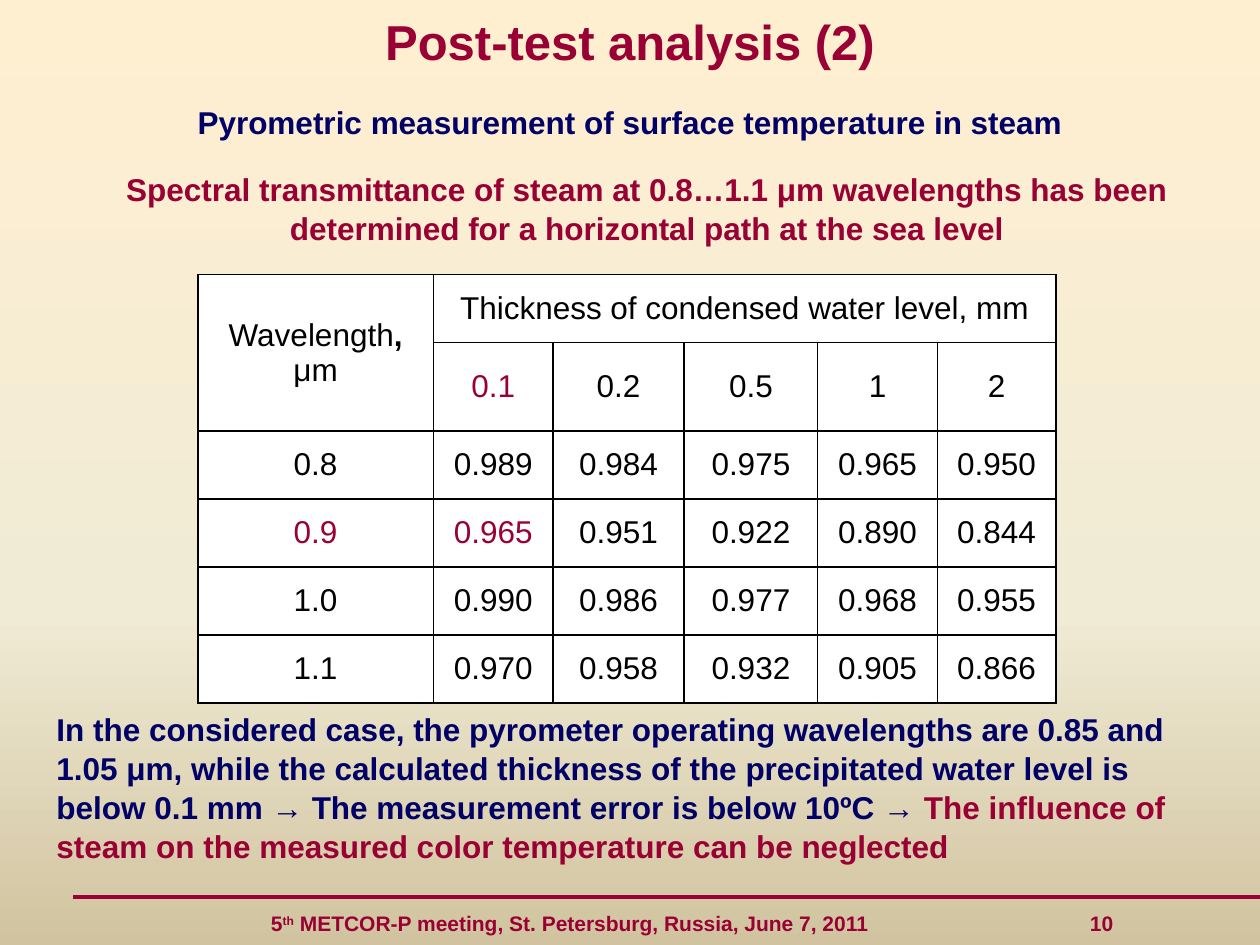
import dataclasses
import typing

import lxml.etree
import pptx
import pptx.dml.color
import pptx.enum.shapes
import pptx.enum.text
import pptx.oxml.ns
import pptx.util

Inches = pptx.util.Inches
Align = pptx.enum.text.PP_ALIGN
Anchor = pptx.enum.text.MSO_ANCHOR
qualified = pptx.oxml.ns.qn


@dataclasses.dataclass(frozen=True)
class Theme:
    font: str = "Arial"
    crimson: str = "990033"
    navy: str = "000066"
    black: str = "000000"
    white: str = "FFFFFF"
    background: tuple = ((0, "FFEFD1"), (65, "F0EBD5"), (100, "D1C39F"))
    title_size: int = 28
    body_size: int = 18
    footer_size: int = 12


THEME = Theme()


class Span(typing.NamedTuple):
    text: str
    color: str | None = None
    bold: bool | None = None
    baseline: int | None = None


@dataclasses.dataclass(frozen=True)
class TextBlock:
    left: float
    top: float
    width: float
    height: float
    spans: tuple[Span, ...]
    color: str
    size: int = THEME.body_size
    align: Align = Align.CENTER
    anchor: Anchor = Anchor.MIDDLE
    line_spacing: float = 1.0
    inset: float = 0.1


BLOCKS = (
    TextBlock(0, 0, 10, 0.65, (Span("Post-test analysis (2)"),), THEME.crimson, THEME.title_size),
    TextBlock(0, 0.67, 10, 0.6,
              (Span("Pyrometric measurement of surface temperature in steam"),), THEME.navy),
    TextBlock(0.62, 1.3, 9.03, 0.7,
              (Span("Spectral transmittance of steam at 0.8…1.1 μm wavelengths has been "
                    "determined for a horizontal path at the sea level"),),
              THEME.crimson, line_spacing=1.04),
    TextBlock(0.35, 5.57, 9.43, 1.49,
              (Span("In the considered case, the pyrometer operating wavelengths are 0.85 and "
                    "1.05 μm, while the calculated thickness of the precipitated water level is "
                    "below 0.1 mm → The measurement error is below 10ºС → "),
               Span("The influence of steam on the measured color temperature can be neglected",
                    THEME.crimson)),
              THEME.navy, align=Align.LEFT, anchor=Anchor.TOP, line_spacing=1.04),
)

FOOTER = TextBlock(2, 7.08, 7.18, 0.5,
                   (Span("5"), Span("th", baseline=30),
                    Span(" METCOR-P meeting, St. Petersburg, Russia, June 7, 2011\t10")),
                   THEME.crimson, THEME.footer_size, Align.LEFT, inset=0.15)
PAGE_NUMBER_TAB = 6.5

COLUMN_WIDTHS = (1.87, 0.95, 1.04, 1.06, 0.95, 0.94)
ROW_HEIGHT = 0.54
THICKNESSES = ("0.1", "0.2", "0.5", "1", "2")
TRANSMITTANCE = {
    "0.8": ("0.989", "0.984", "0.975", "0.965", "0.950"),
    "0.9": ("0.965", "0.951", "0.922", "0.890", "0.844"),
    "1.0": ("0.990", "0.986", "0.977", "0.968", "0.955"),
    "1.1": ("0.970", "0.958", "0.932", "0.905", "0.866"),
}
HIGHLIGHTED_CELLS = {(1, 1), (3, 0), (3, 1)}


def rgb(color: str) -> pptx.dml.color.RGBColor:
    return pptx.dml.color.RGBColor.from_string(color)


def add_child(parent, tag: str, **attributes: str):
    child = lxml.etree.SubElement(parent, qualified(tag))
    for name, value in attributes.items():
        child.set(name, value)
    return child


def paint_background(page) -> None:
    fill = page.background.fill
    fill.gradient()
    fill.gradient_angle = 270
    stops = next(page.element.iter(qualified("a:gsLst")))
    for stop in list(stops):
        stops.remove(stop)
    for percent, color in THEME.background:
        stop = add_child(stops, "a:gs", pos=str(percent * 1000))
        add_child(stop, "a:srgbClr", val=color)


def write_paragraph(para, spans: typing.Iterable[Span], color: str, size: int,
                    align: Align, bold: bool) -> None:
    para.alignment = align
    para.font.name = THEME.font
    para.font.size = pptx.util.Pt(size)
    para.font.bold = bold
    para.font.color.rgb = rgb(color)
    for span in spans:
        run = para.add_run()
        run.text = span.text
        if span.color:
            run.font.color.rgb = rgb(span.color)
        if span.bold is not None:
            run.font.bold = span.bold
        if span.baseline:
            run.font._element.set("baseline", str(span.baseline * 1000))


def add_text(page, block: TextBlock):
    box = page.shapes.add_textbox(Inches(block.left), Inches(block.top),
                                  Inches(block.width), Inches(block.height))
    frame = box.text_frame
    frame.word_wrap = True
    frame.vertical_anchor = block.anchor
    frame.margin_left = Inches(block.inset)
    para = frame.paragraphs[0]
    para.line_spacing = block.line_spacing
    write_paragraph(para, block.spans, block.color, block.size, block.align, True)
    return para


def add_footer(page) -> None:
    rule = page.shapes.add_connector(pptx.enum.shapes.MSO_CONNECTOR.STRAIGHT,
                                     Inches(0.58), Inches(7.12), Inches(10), Inches(7.12))
    rule.line.color.rgb = rgb(THEME.crimson)
    rule.line.width = pptx.util.Pt(2.25)
    add_child(rule._element.spPr, "a:effectLst")
    para = add_text(page, FOOTER)
    properties = para._p.get_or_add_pPr()
    tabs = lxml.etree.Element(qualified("a:tabLst"))
    add_child(tabs, "a:tab", pos=str(Inches(PAGE_NUMBER_TAB)), algn="l")
    properties.find(qualified("a:defRPr")).addprevious(tabs)


def style_cell(cell) -> None:
    cell.vertical_anchor = Anchor.MIDDLE
    cell.fill.solid()
    cell.fill.fore_color.rgb = rgb(THEME.white)
    properties = cell._tc.get_or_add_tcPr()
    for index, side in enumerate(("a:lnL", "a:lnR", "a:lnT", "a:lnB")):
        border = lxml.etree.Element(qualified(side), w=str(pptx.util.Pt(1)))
        add_child(add_child(border, "a:solidFill"), "a:srgbClr", val=THEME.black)
        properties.insert(index, border)


def add_transmittance_table(page) -> None:
    rows = [
        ((Span("Wavelength"), Span(", ", bold=True), Span("μm")),
         (Span("Thickness of condensed water level, mm"),), (), (), (), ()),
        ((), *((Span(value),) for value in THICKNESSES)),
        *(tuple((Span(value),) for value in (wavelength, *values))
          for wavelength, values in TRANSMITTANCE.items()),
    ]
    frame = page.shapes.add_table(len(rows), len(COLUMN_WIDTHS), Inches(1.57), Inches(2.18),
                                  Inches(sum(COLUMN_WIDTHS)), Inches(ROW_HEIGHT * len(rows)))
    table = frame.table
    table.first_row = False
    table.horz_banding = False
    for column, width in zip(table.columns, COLUMN_WIDTHS):
        column.width = Inches(width)
    for row_index, row in enumerate(rows):
        table.rows[row_index].height = Inches(ROW_HEIGHT)
        for column_index, spans in enumerate(row):
            cell = table.cell(row_index, column_index)
            style_cell(cell)
            highlighted = (row_index, column_index) in HIGHLIGHTED_CELLS
            write_paragraph(cell.text_frame.paragraphs[0], spans,
                            THEME.crimson if highlighted else THEME.black,
                            THEME.body_size, Align.CENTER, False)
    table.cell(0, 0).merge(table.cell(1, 0))
    table.cell(0, 1).merge(table.cell(0, len(COLUMN_WIDTHS) - 1))


def main() -> None:
    deck = pptx.Presentation()
    deck.slide_width = Inches(10)
    deck.slide_height = Inches(7.5)
    page = deck.slides.add_slide(deck.slide_layouts[6])
    paint_background(page)
    add_footer(page)
    for block in BLOCKS:
        add_text(page, block)
    add_transmittance_table(page)
    deck.save("out.pptx")


if __name__ == "__main__":
    main()
